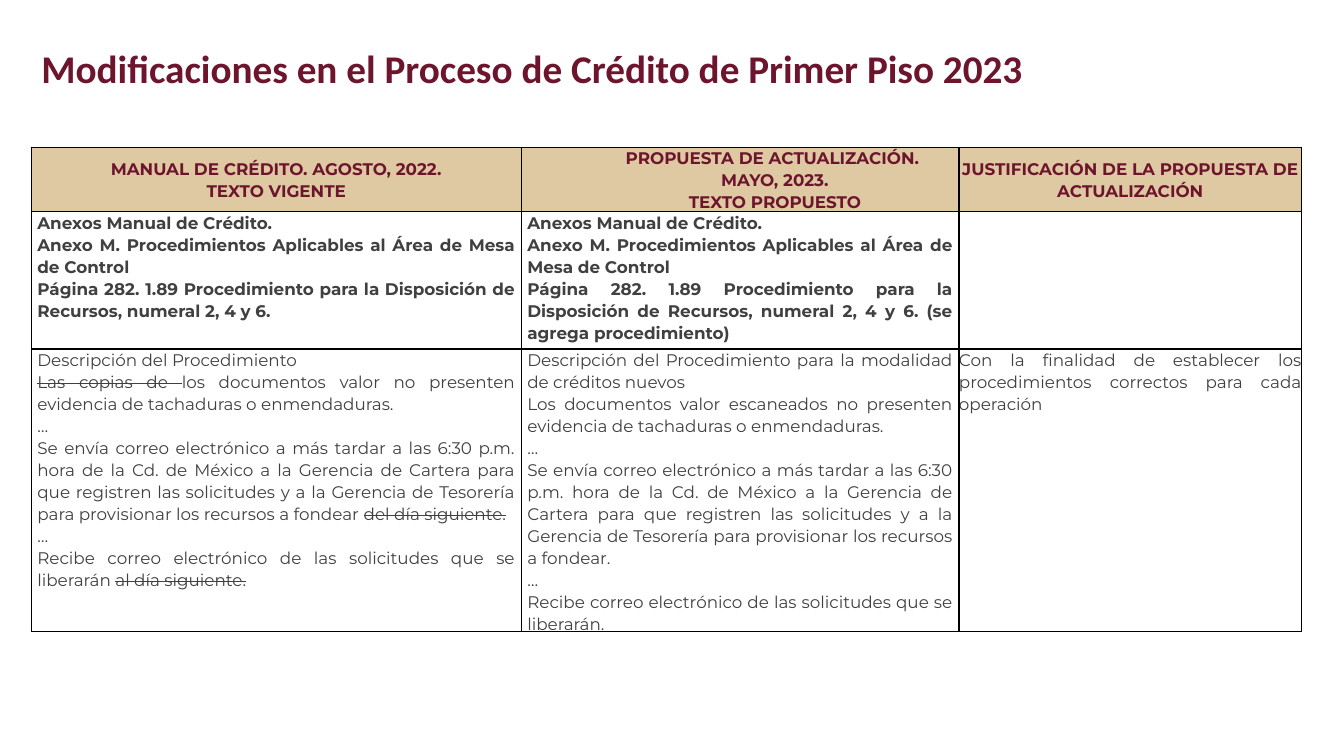
import pptx
import pptx.dml.color
import pptx.enum.text
import pptx.oxml
import pptx.oxml.ns
import pptx.util

SLIDE_WIDTH, SLIDE_HEIGHT = 13.33, 7.5
WINE, SAND, GREY, BLACK = "6E152E", "DEC9A2", "404040", "000000"
ALIGN = pptx.enum.text.PP_ALIGN
ANCHOR = pptx.enum.text.MSO_ANCHOR

# Table grid, in percent of the slide
LEFT = 2.33
TABLE_TOP = 19.47
COLUMNS = [36.46, 32.56, 25.51]
ROWS = [6.13, 18.13, 37.33]
CELL_MARGINS = [0.45, 0.45, 0]
PROPOSAL_INDENT = 5.18

# Each paragraph is a list of runs; a run in a Struck is crossed out
HEADERS = [
    ["MANUAL DE CRÉDITO. AGOSTO, 2022.", "TEXTO VIGENTE"],
    ["PROPUESTA DE ACTUALIZACIÓN. ", "MAYO, 2023.", "TEXTO PROPUESTO"],
    ["JUSTIFICACIÓN DE LA PROPUESTA DE ACTUALIZACIÓN"],
]
ANNEX = [
    "Anexos Manual de Crédito.",
    "Anexo M. Procedimientos Aplicables al Área de Mesa de Control",
]
PAGE = ("Página 282. 1.89 Procedimiento para la Disposición de Recursos, "
        "numeral 2, 4 y 6.")
REFERENCES = [ANNEX + [PAGE], ANNEX + [PAGE + " (se agrega procedimiento)"], []]
MAIL = ("Se envía correo electrónico a más tardar a las 6:30 p.m. hora de la Cd. de "
        "México a la Gerencia de Cartera para que registren las solicitudes y a la "
        "Gerencia de Tesorería para provisionar los recursos a fondear")
RECEIPT = "Recibe correo electrónico de las solicitudes que se liberarán"
NO_ERASURES = "no presenten evidencia de tachaduras o enmendaduras."


class Struck(str):
    """Text that is crossed out."""


PROCEDURES = [
    [
        "Descripción del Procedimiento",
        [Struck("Las copias de "), "los documentos valor " + NO_ERASURES],
        "…",
        [MAIL + " ", Struck("del día siguiente.")],
        "…",
        [RECEIPT + " ", Struck("al día siguiente.")],
    ],
    [
        "Descripción del Procedimiento para la modalidad de créditos nuevos",
        "Los documentos valor escaneados " + NO_ERASURES,
        "…",
        MAIL + ". ",
        "…",
        RECEIPT + ".",
    ],
    ["Con la finalidad de establecer los procedimientos correctos para cada operación"],
]


def across(percent):
    return pptx.util.Inches(SLIDE_WIDTH * percent / 100)


def down(percent):
    return pptx.util.Inches(SLIDE_HEIGHT * percent / 100)


def color(hex_value):
    return pptx.dml.color.RGBColor.from_string(hex_value)


def set_font(paragraph, name, size, hex_value, bold):
    font = paragraph.font
    font.name, font.size, font.bold = name, pptx.util.Pt(size), bold
    font.color.rgb = color(hex_value)


def add_title(slide, text):
    title = slide.shapes.title
    title.left, title.top = across(LEFT), down(5.2)
    title.width, title.height = across(76.29), down(7.6)
    frame = title.text_frame
    frame.text = text
    frame.word_wrap = True
    frame.auto_size = pptx.enum.text.MSO_AUTO_SIZE.SHAPE_TO_FIT_TEXT
    frame.vertical_anchor = ANCHOR.TOP
    paragraph = frame.paragraphs[0]
    paragraph.alignment = ALIGN.LEFT
    set_font(paragraph, "Calibri", 28, WINE, True)


def add_borders(cell):
    properties = cell._tc.get_or_add_tcPr()
    for side in ("lnL", "lnR", "lnT", "lnB"):
        properties.append(pptx.oxml.parse_xml(
            f'<a:{side} {pptx.oxml.ns.nsdecls("a")} w="12700">'
            f'<a:solidFill><a:srgbClr val="{BLACK}"/></a:solidFill></a:{side}>'))


def write_cell(cell, paragraphs, alignment, hex_value, bold, indent=0):
    frame = cell.text_frame
    for index, runs in enumerate(paragraphs):
        paragraph = frame.add_paragraph() if index else frame.paragraphs[0]
        paragraph.alignment = alignment
        paragraph.line_spacing = 1.07
        if indent:
            properties = paragraph._p.get_or_add_pPr()
            properties.set("marL", "0")
            properties.set("indent", str(across(indent)))
        for text in [runs] if isinstance(runs, str) else runs:
            run = paragraph.add_run()
            run.text = text
            if isinstance(text, Struck):
                run._r.get_or_add_rPr().set("strike", "sngStrike")
        set_font(paragraph, "Montserrat", 12, hex_value, bold)


def format_cell(cell, margin, fill):
    cell.margin_left = cell.margin_right = across(margin)
    cell.margin_top = cell.margin_bottom = 0
    add_borders(cell)
    if fill:
        cell.fill.solid()
        cell.fill.fore_color.rgb = color(fill)
        cell.vertical_anchor = ANCHOR.MIDDLE
    else:
        cell.fill.background()
        cell.vertical_anchor = ANCHOR.TOP


def add_comparison_table(slide):
    table = slide.shapes.add_table(
        len(ROWS), len(COLUMNS), across(LEFT), down(TABLE_TOP),
        across(sum(COLUMNS)), down(sum(ROWS))).table
    for column, width in zip(table.columns, COLUMNS):
        column.width = across(width)
    for row, height in zip(table.rows, ROWS):
        row.height = down(height)

    # Row styles: texts, alignment, text colour, bold, fill
    row_styles = [
        (HEADERS, ALIGN.CENTER, WINE, True, SAND),
        (REFERENCES, ALIGN.JUSTIFY, GREY, True, None),
        (PROCEDURES, ALIGN.JUSTIFY, GREY, False, None),
    ]
    for row, (texts, alignment, hex_value, bold, fill) in enumerate(row_styles):
        for column, paragraphs in enumerate(texts):
            cell = table.cell(row, column)
            format_cell(cell, CELL_MARGINS[column], fill)
            indent = PROPOSAL_INDENT if (row, column) == (0, 1) else 0
            write_cell(cell, paragraphs, alignment, hex_value, bold, indent)


def main():
    presentation = pptx.Presentation()
    presentation.slide_width = across(100)
    presentation.slide_height = down(100)
    slide = presentation.slides.add_slide(presentation.slide_layouts[5])
    add_title(slide, "Modificaciones en el Proceso de Crédito de Primer Piso 2023")
    add_comparison_table(slide)
    presentation.save("out.pptx")


if __name__ == "__main__":
    main()
